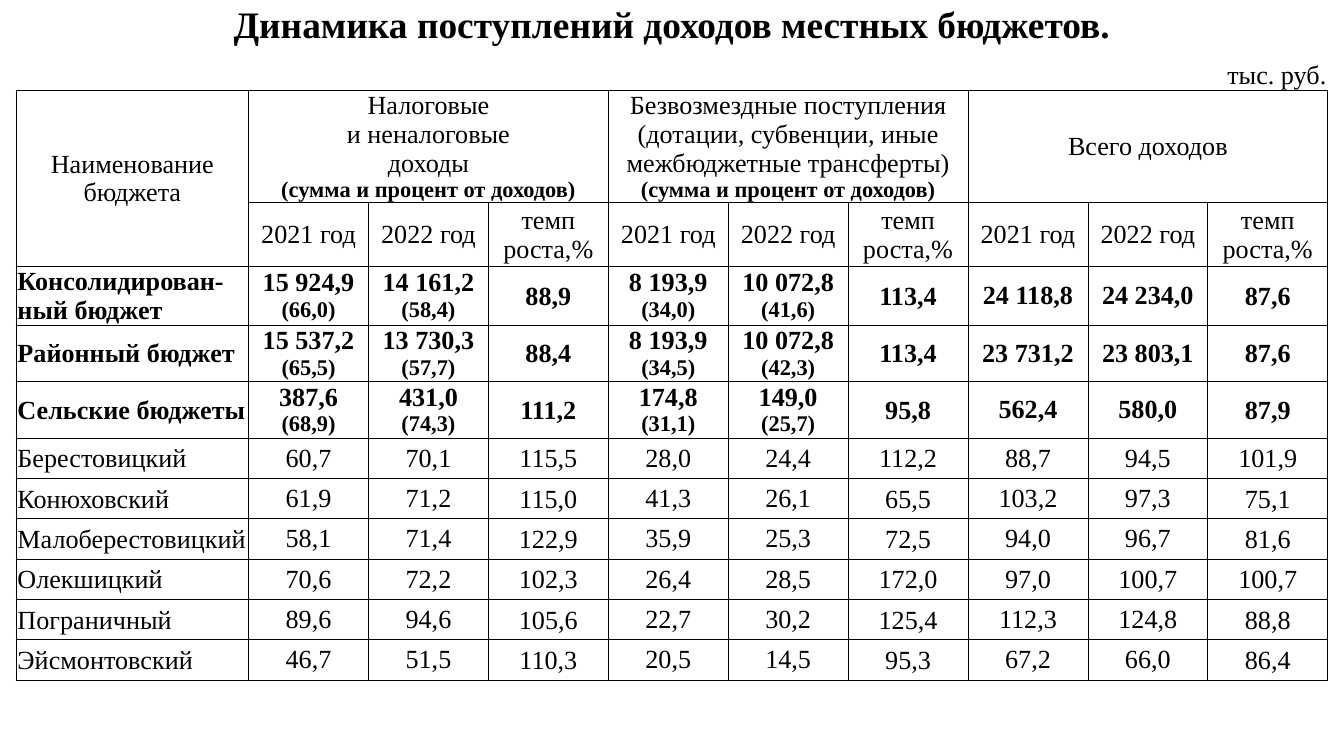
from dataclasses import dataclass

from lxml import etree
from pptx import Presentation
from pptx import util as u
from pptx.dml import color
from pptx.enum import text
from pptx.oxml import ns


@dataclass(frozen=True)
class Theme:
    """Colours, font and type sizes of the slide."""
    ink: str = "000000"
    font: str = "Times New Roman"
    head: int = 20
    body: int = 14
    small: int = 12
    line: float = 0.5


THEME = Theme()
SUM = "(сумма и процент от доходов)"
TITLE = "Динамика поступлений доходов местных бюджетов."
UNIT = "тыс. руб."
GROUPS = {
    1: f"Налоговые\nи неналоговые\nдоходы\n{SUM}",
    4: f"Безвозмездные поступления (дотации, субвенции, иные межбюджетные трансферты)\n{SUM}",
    7: "Всего доходов",
}
YEARS = ("2021 год", "2022 год", "темп\nроста,%")
TOTALS = (
    "Консолидирован-ный бюджет|15 924,9\n(66,0)|14 161,2\n(58,4)|88,9|8 193,9\n(34,0)|10 072,8\n(41,6)|113,4|24 118,8|24 234,0|87,6",
    "Районный бюджет|15 537,2\n(65,5)|13 730,3\n(57,7)|88,4|8 193,9\n(34,5)|10 072,8\n(42,3)|113,4|23 731,2|23 803,1|87,6",
    "Сельские бюджеты|387,6\n(68,9)|431,0\n(74,3)|111,2|174,8\n(31,1)|149,0\n(25,7)|95,8|562,4|580,0|87,9",
)
LOCALS = (
    "Берестовицкий|60,7|70,1|115,5|28,0|24,4|112,2|88,7|94,5|101,9",
    "Конюховский|61,9|71,2|115,0|41,3|26,1|65,5|103,2|97,3|75,1",
    "Малоберестовицкий|58,1|71,4|122,9|35,9|25,3|72,5|94,0|96,7|81,6",
    "Олекшицкий|70,6|72,2|102,3|26,4|28,5|172,0|97,0|100,7|100,7",
    "Пограничный|89,6|94,6|105,6|22,7|30,2|125,4|112,3|124,8|88,8",
    "Эйсмонтовский|46,7|51,5|110,3|20,5|14,5|95,3|67,2|66,0|86,4",
)
WIDE = 9.76
NAME = 1.73
COLS = [NAME] + [(WIDE - NAME) / 9] * 9
ROWS = [0.32] * 2 + [0.47] * 2 + [0.3] * 9
MID = text.MSO_ANCHOR.MIDDLE
LOW = text.MSO_ANCHOR.BOTTOM
ALIGN = text.PP_ALIGN


def apply(item, vals):
    """Set each attribute in vals on item."""
    for name, val in vals.items():
        setattr(item, name, val)


def edge(cell, sides):
    """Draw the named sides of a cell and hide the others."""
    props = cell._tc.get_or_add_tcPr()
    for side in "LRTB":
        line = etree.SubElement(props, ns.qn(f"a:ln{side}"), w=str(u.Pt(THEME.line)))
        if side in sides:
            fill = etree.SubElement(line, ns.qn("a:solidFill"))
            etree.SubElement(fill, ns.qn("a:srgbClr"), val=THEME.ink)
        else:
            etree.SubElement(line, ns.qn("a:noFill"))


def write(cell, words, size=THEME.body, bold=False, align=ALIGN.CENTER, anchor=MID):
    """Write lines into a cell, with bracketed lines small and bold."""
    cell.vertical_anchor = anchor
    frame = cell.text_frame
    for num, line in enumerate(words.split("\n")):
        para = frame.add_paragraph() if num else frame.paragraphs[0]
        para.alignment = align
        run = para.add_run()
        run.text = line
        note = line.startswith("(")
        apply(run.font, {"name": THEME.font, "bold": bold or note,
                         "size": u.Pt(THEME.small if note else size)})
        run.font.color.rgb = color.RGBColor.from_string(THEME.ink)


def grid(slide):
    """Add the bare table with its sizes, edges and insets."""
    frame = slide.shapes.add_table(
        len(ROWS), len(COLS), u.Inches(0.12), u.Inches(0.03),
        u.Inches(WIDE), u.Inches(sum(ROWS)))
    table = frame.table
    apply(table, {"first_row": False, "horz_banding": False})
    for col, wide in zip(table.columns, COLS):
        col.width = u.Inches(wide)
    for row, tall in zip(table.rows, ROWS):
        row.height = u.Inches(tall)
    frame.height = u.Inches(5.25)
    inset = u.Inches(0.01)
    for row in range(len(ROWS)):
        for col in range(len(COLS)):
            cell = table.cell(row, col)
            edge(cell, ("", "B")[row] if row < 2 else "LRTB")
            cell.fill.background()
            apply(cell, {"margin_left": inset, "margin_right": inset, "margin_top": inset,
                         "margin_bottom": inset if row > 3 and col % 3 else 0})
    return table


def span(table, row, col, down=1, over=1):
    """Merge a block of cells and return its first cell."""
    cell = table.cell(row, col)
    cell.merge(table.cell(row + down - 1, col + over - 1))
    return cell


def header(table):
    """Fill the title, unit and column heads."""
    write(span(table, 0, 0, over=len(COLS)), TITLE, THEME.head, True, anchor=LOW)
    for col in (1, 3, 5):
        span(table, 1, col, over=2)
    write(table.cell(1, 9), UNIT, align=ALIGN.RIGHT, anchor=LOW)
    write(span(table, 2, 0, down=2), "Наименование бюджета")
    for col, words in GROUPS.items():
        write(span(table, 2, col, over=3), words)
        for step, year in enumerate(YEARS):
            write(table.cell(3, col + step), year)


def body(table):
    """Fill the budget rows, totals in bold."""
    for row, line in enumerate(TOTALS + LOCALS):
        for col, words in enumerate(line.split("|")):
            write(table.cell(row + 4, col), words, bold=row < len(TOTALS),
                  align=ALIGN.CENTER if col else ALIGN.LEFT)


def main():
    """Build and save the slide."""
    deck = Presentation()
    apply(deck, {"slide_width": u.Inches(10), "slide_height": u.Inches(10 * 9 / 16)})
    table = grid(deck.slides.add_slide(deck.slide_layouts[6]))
    header(table)
    body(table)
    deck.save("out.pptx")


if __name__ == "__main__":
    main()
